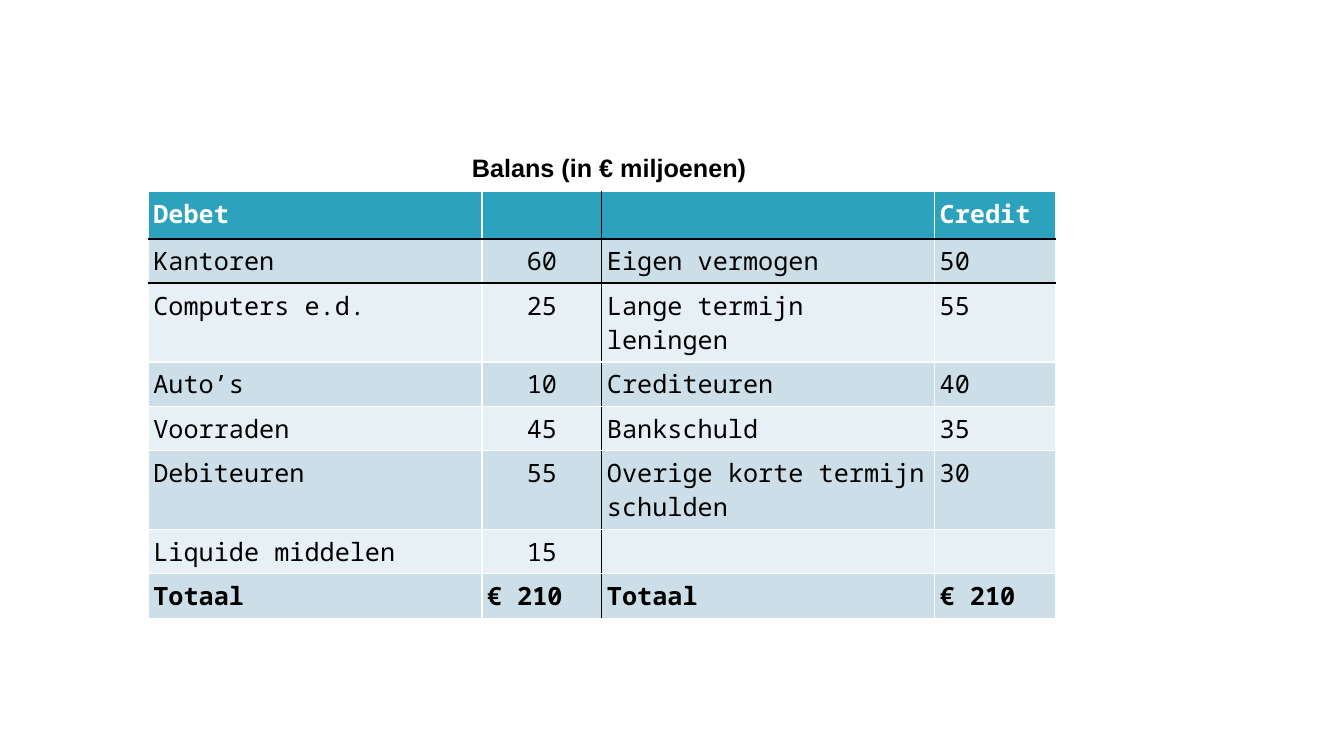
from lxml import etree
from pptx import Presentation
from pptx.dml.color import RGBColor
from pptx.enum.text import MSO_AUTO_SIZE, PP_ALIGN
from pptx.oxml.ns import qn
from pptx.util import Inches, Pt

LEFT, CENTER = PP_ALIGN.LEFT, PP_ALIGN.CENTER
GROW = MSO_AUTO_SIZE.SHAPE_TO_FIT_TEXT
COLORS = {"head": "2DA2BF", "dark": "CCDFE8", "light": "E7F0F4",
          "white": "FFFFFF", "black": "000000"}
WIDTHS = [3.31, 1.19, 3.3, 1.2]
TOP, LEAD, ROW = 1.9, 0.47, 0.41
PAD = Inches(0.05)
ROWS = [
    ["Debet", "", "", "Credit"],
    ["Kantoren", "60", "Eigen vermogen", "50"],
    ["Computers e.d.", "25", "Lange termijn leningen", "55"],
    ["Auto’s", "10", "Crediteuren", "40"],
    ["Voorraden", "45", "Bankschuld", "35"],
    ["Debiteuren", "55", "Overige korte termijn schulden", "30"],
    ["Liquide middelen", "15", "", ""],
    ["Totaal", "€ 210", "Totaal", "€ 210"],
]
LAST = len(ROWS) - 1


def tint(name):
    return RGBColor.from_string(COLORS[name])


def style(para, face, color, bold):
    font = para.font
    font.name, font.size, font.bold = face, Pt(18), bold
    font.color.rgb = tint(color)


def pad(box):
    box.margin_left = box.margin_right = PAD
    box.margin_top = box.margin_bottom = PAD


def edge(cell, side, color, width):
    props = cell._tc.get_or_add_tcPr()
    line = etree.SubElement(props, qn("a:ln" + side), w=str(Pt(width)))
    fill = etree.SubElement(line, qn("a:solidFill"))
    etree.SubElement(fill, qn("a:srgbClr"), val=COLORS[color])


def frame(cell, row, col):
    dark = {"L": col == 2, "R": col == 1,
            "T": row in (1, 2), "B": row in (0, 1)}
    for side, black in dark.items():
        wide = black and side in "TB"
        edge(cell, side, "black" if black else "white", 2 if wide else 1)


def fill_cell(cell, row, col, text):
    pad(cell)
    frame(cell, row, col)
    cell.fill.solid()
    shade = "head" if row == 0 else "dark" if row % 2 else "light"
    cell.fill.fore_color.rgb = tint(shade)
    cell.text = text
    para = cell.text_frame.paragraphs[0]
    para.alignment = CENTER if col == 1 and 0 < row < LAST else LEFT
    style(para, "Noto Sans Mono", "black" if row else "white",
          row in (0, LAST))


def add_sheet(slide):
    high = LEAD + ROW * LAST
    table = slide.shapes.add_table(
        len(ROWS), len(WIDTHS), Inches(1.47), Inches(TOP),
        Inches(sum(WIDTHS)), Inches(high)).table
    for col, width in zip(table.columns, WIDTHS):
        col.width = Inches(width)
    for row, texts in enumerate(ROWS):
        table.rows[row].height = Inches(ROW if row else LEAD)
        for col, text in enumerate(texts):
            fill_cell(table.cell(row, col), row, col, text)


def add_label(slide, text):
    high = 0.44
    box = slide.shapes.add_textbox(
        Inches(4.63), Inches(TOP - high), Inches(3.11), Inches(high))
    body = box.text_frame
    pad(body)
    body.word_wrap = False
    body.auto_size = GROW
    body.text = text
    style(body.paragraphs[0], "Arial", "black", True)


def main():
    deck = Presentation()
    deck.slide_width, deck.slide_height = Inches(13.33), Inches(7.5)
    slide = deck.slides.add_slide(deck.slide_layouts[6])
    add_sheet(slide)
    add_label(slide, "Balans (in € miljoenen)")
    deck.save("out.pptx")


if __name__ == "__main__":
    main()
